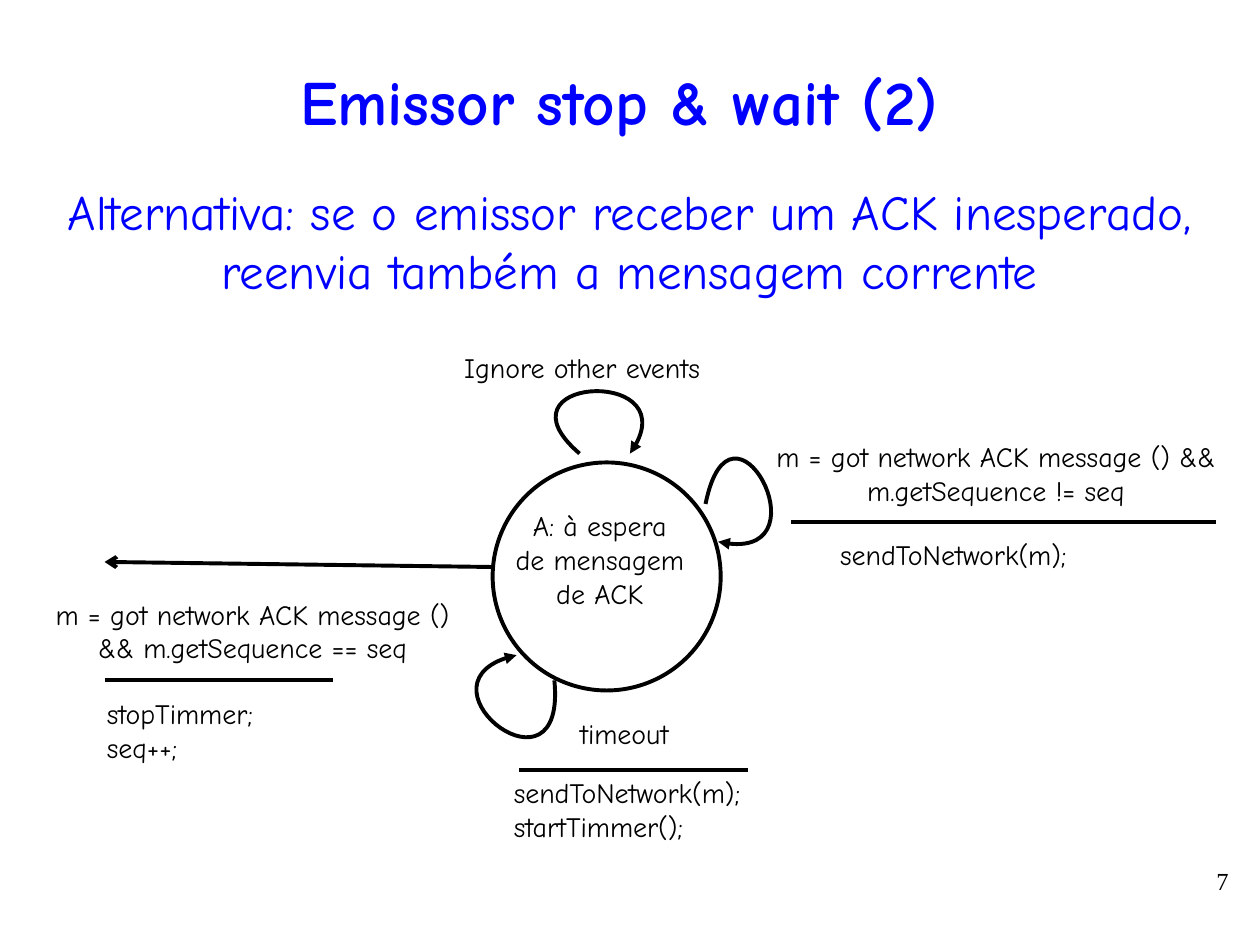
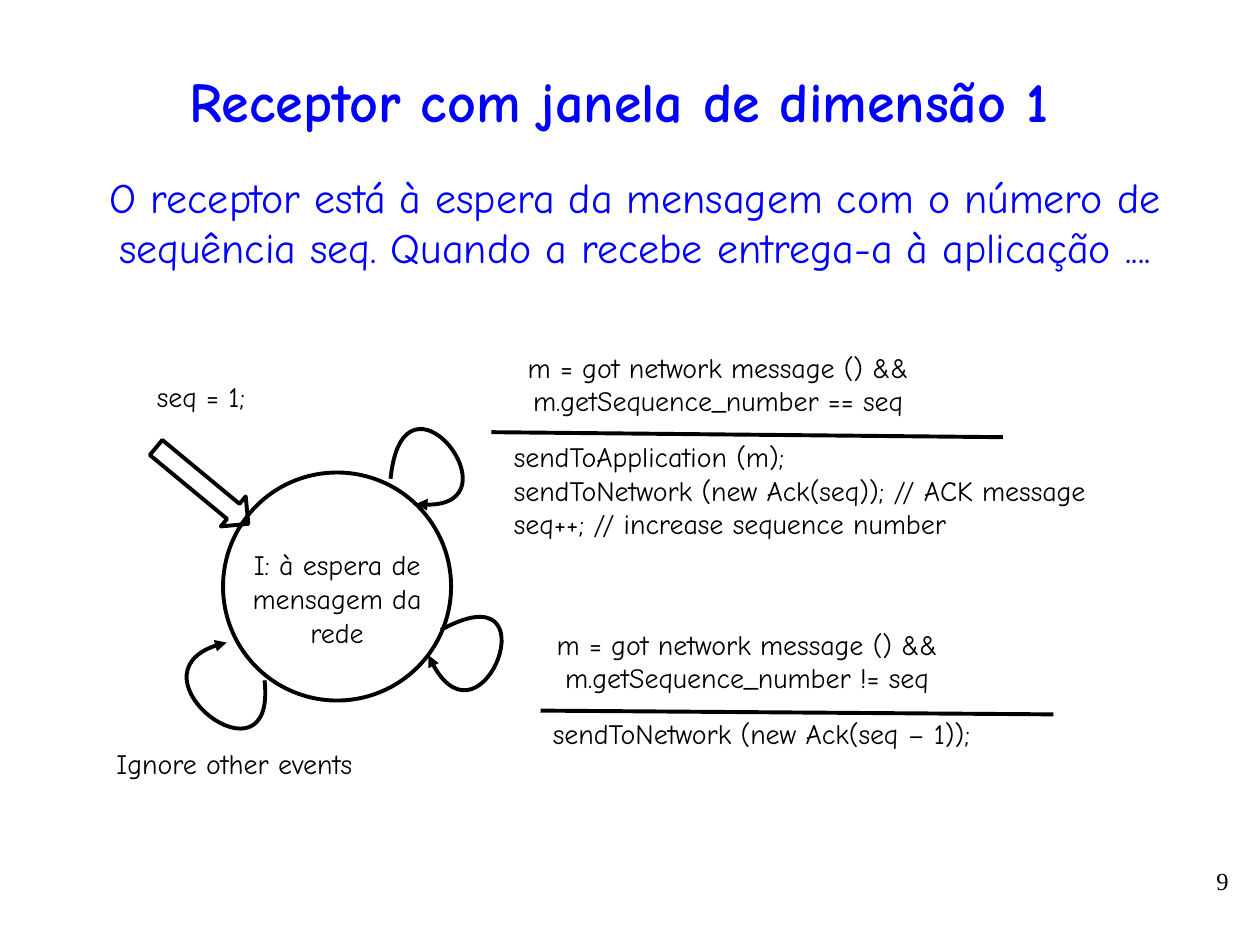
from lxml import etree
from pptx import Presentation
from pptx import util as u
from pptx.dml.color import RGBColor
from pptx.enum import shapes, text
from pptx.oxml.ns import qn

BLUE = RGBColor(0x00, 0x00, 0xFF)
BLACK = RGBColor(0x00, 0x00, 0x00)
FONT = "Comic Neue"
NUMBER_FONT = "Times New Roman"
LEFT, CENTER, RIGHT = text.PP_ALIGN.LEFT, text.PP_ALIGN.CENTER, text.PP_ALIGN.RIGHT

presentation = Presentation()
presentation.slide_width = u.Inches(10)
presentation.slide_height = u.Inches(7.5)

# Grid of 100 columns by 75 rows of square cells
CELL = presentation.slide_width // 100
STATE_SIZE = 18.1


def add_text(slide, content, box, size=16, color=BLACK, font=FONT, bold=False,
             align=CENTER, wrap=True, anchor=text.MSO_ANCHOR.TOP):
    shape = slide.shapes.add_textbox(*(round(n * CELL) for n in box))
    frame = shape.text_frame
    frame.word_wrap = wrap
    frame.vertical_anchor = anchor
    frame.text = content
    for paragraph in frame.paragraphs:
        paragraph.alignment = align
        paragraph.font.size = u.Pt(size)
        paragraph.font.name = font
        paragraph.font.bold = bold
        paragraph.font.color.rgb = color


def draw_outline(shape, head=None):
    """Black line without shadow, with an optional arrowhead at its end."""
    shape.line.color.rgb = BLACK
    shape.line.width = u.Pt(2.25)
    properties = shape._element.spPr
    if head:
        etree.SubElement(properties.find(qn("a:ln")), qn("a:tailEnd"), type=head)
    etree.SubElement(properties, qn("a:effectLst"))


# Labels: text, box, alignment, wrap
# Loops: start, two control points, end
# Lines: start, end, arrowhead
sender = {
    "title": ("Emissor stop & wait (2)", 36),
    "intro": ("Alternativa: se o emissor receber um ACK inesperado, "
              "reenvia também a mensagem corrente", 28, (3.5, 13.9, 92.9, 10.4)),
    "number": "7",
    "state": (39.1, 36.7),
    "labels": [
        ("A: à espera de mensagem de ACK", (39.9, 39.9, 15.4, 11.8), CENTER, True),
        ("Ignore other events", (34.3, 27.3, 23.8, 3.7), CENTER, False),
        ("m = got network ACK message () &&\nm.getSequence != seq",
         (59.4, 34.4, 39.3, 6.4), CENTER, False),
        ("sendToNetwork(m);", (65.7, 42.2, 22.7, 3.7), LEFT, False),
        ("m = got network ACK message ()\n&& m.getSequence == seq",
         (2.2, 46.9, 35.7, 6.4), CENTER, False),
        ("stopTimmer;\nseq++;", (7.5, 54.8, 19.7, 6.4), LEFT, True),
        ("timeout", (44.5, 56.4, 10.1, 3.7), CENTER, False),
        ("sendToNetwork(m);\nstartTimmer();", (39.8, 61.1, 22.7, 6.4), LEFT, False),
    ],
    "loops": [
        [(46.4, 36.5), (39, 30.5), (55.3, 28.9), (49.7, 36.3)],
        [(55.6, 39.6), (58.3, 30.4), (66, 44.9), (57, 42.6)],
        [(43.8, 54.4), (45.1, 63.8), (32.2, 53.7), (41.3, 52.2)],
    ],
    "lines": [
        ((62.8, 41.4), (96.5, 41.4), None),
        ((8.3, 54), (26.4, 54), None),
        ((41.2, 61.1), (59.4, 61.1), None),
        ((39.1, 45), (8.3, 44.6), "arrow"),
    ],
}

receiver = {
    "title": ("Receptor com janela de dimensão 1", 32),
    "intro": ("O receptor está à espera da mensagem com o número de sequência seq. "
              "Quando a recebe entrega-a à aplicação ....", 24, (5.1, 13.1, 90.6, 9.1)),
    "number": "9",
    "state": (17.7, 37.5),
    "labels": [
        ("I: à espera de mensagem da rede", (18.5, 43, 16.5, 9.1), CENTER, True),
        ("seq = 1;", (11.1, 29.6, 9.7, 3.7), CENTER, False),
        ("Ignore other events", (6.7, 58.8, 23.8, 3.7), CENTER, False),
        ("m = got network message () &&\nm.getSequence_number == seq",
         (39.8, 27.3, 34.4, 6.4), CENTER, False),
        ("sendToApplication (m);\nsendToNetwork (new Ack(seq)); // ACK message\n"
         "seq++; // increase sequence number", (39.8, 34.4, 54.3, 9.1), LEFT, True),
        ("m = got network message () &&\nm.getSequence_number != seq",
         (42.1, 49.3, 34.4, 6.4), CENTER, False),
        ("sendToNetwork (new Ack(seq – 1));", (42.9, 56.4, 52, 3.7), LEFT, True),
    ],
    "loops": [
        [(31.1, 37.6), (31.9, 28), (42.3, 40.8), (33, 40.2)],
        [(35.4, 49.5), (44, 45.4), (38.3, 60.8), (34.1, 52.5)],
        [(20.8, 53.6), (22.1, 63), (9.1, 52.9), (18.3, 51.4)],
    ],
    "lines": [
        ((39, 34.3), (79.6, 34.7), None),
        ((42.9, 56.4), (83.6, 56.7), None),
    ],
    "entry arrow": (11.3, 37, 9.5, 3.1),
}

for content in (sender, receiver):
    slide = presentation.slides.add_slide(presentation.slide_layouts[6])

    # Title, introduction and slide number
    title, title_size = content["title"]
    add_text(slide, title, (3.3, 4.2, 91.7, 7.5), size=title_size, color=BLUE,
             bold=True, anchor=text.MSO_ANCHOR.MIDDLE)
    intro, intro_size, intro_box = content["intro"]
    add_text(slide, intro, intro_box, size=intro_size, color=BLUE)
    add_text(slide, content["number"], (75.2, 68.2, 23.3, 5.2), size=14,
             font=NUMBER_FONT, align=RIGHT)

    # State circle and entry arrow
    outlined = [(shapes.MSO_SHAPE.OVAL, (*content["state"], STATE_SIZE, STATE_SIZE), 0)]
    if "entry arrow" in content:
        outlined.append((shapes.MSO_SHAPE.RIGHT_ARROW, content["entry arrow"], 39.6))
    for kind, box, rotation in outlined:
        shape = slide.shapes.add_shape(kind, *(round(n * CELL) for n in box))
        shape.rotation = rotation
        shape.fill.background()
        draw_outline(shape)

    # Loops back to the state: three straight segments become one curve
    for start, *others in content["loops"]:
        builder = slide.shapes.build_freeform(*start, scale=CELL)
        builder.add_line_segments(others, close=False)
        loop = builder.convert_to_shape()
        loop.fill.background()
        draw_outline(loop, head="triangle")
        outline = loop._element.find(".//" + qn("a:path"))
        segments = outline.findall(qn("a:lnTo"))
        curve = etree.SubElement(outline, qn("a:cubicBezTo"))
        for segment in segments:
            curve.append(segment[0])
            outline.remove(segment)

    # Event and action separators, and the exit arrow
    for start, end, head in content["lines"]:
        connector = slide.shapes.add_connector(
            shapes.MSO_CONNECTOR.STRAIGHT, *(round(n * CELL) for n in start + end))
        draw_outline(connector, head)

    # Events and actions
    for label, box, align, wrap in content["labels"]:
        add_text(slide, label, box, align=align, wrap=wrap)

presentation.save("out.pptx")
